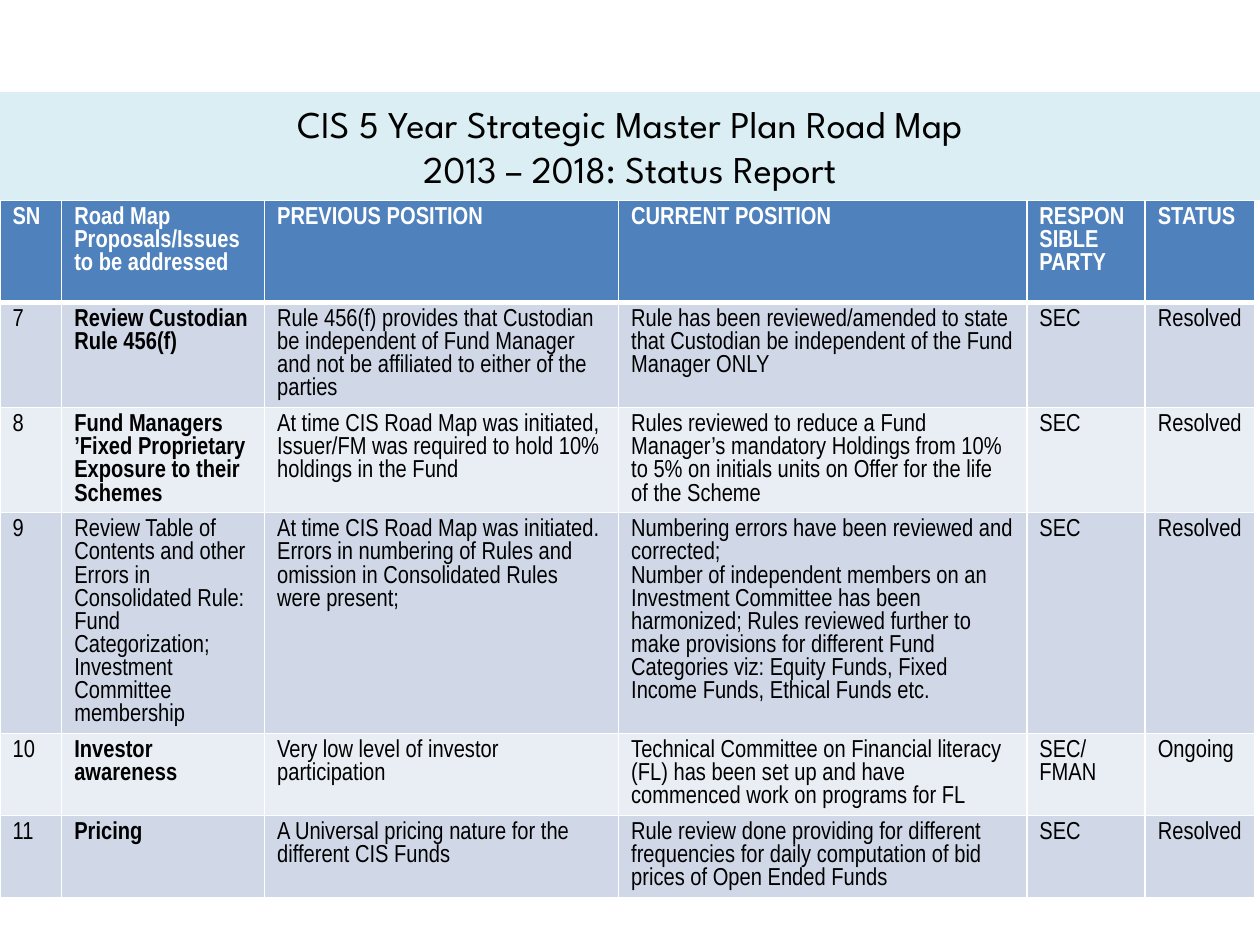
from dataclasses import dataclass

import pptx
import pptx.dml.color
import pptx.enum.shapes
import pptx.enum.text
import pptx.oxml
import pptx.oxml.ns
import pptx.util

COLORS = {
    "banner": "DBEEF4",
    "header": "4F81BD",
    "odd": "D0D8E8",
    "even": "E9EDF4",
    "white": "FFFFFF",
    "black": "000000",
}
SLIDE_WIDTH = pptx.util.Inches(10)
SLIDE_HEIGHT = pptx.util.Inches(7.5)
BANNER_TOP = 0.73
BANNER_HEIGHT = 0.86
TABLE_TOP = BANNER_TOP + BANNER_HEIGHT
COLUMN_WIDTHS = (0.49, 1.61, 2.81, 3.24, 0.94, 0.87)
HEADER_HEIGHT = 0.81
ROW_HEIGHT = 0.41
TITLE = "CIS 5 Year Strategic Master Plan Road Map\v2013 – 2018: Status Report"
HEADINGS = (
    "SN",
    "Road Map Proposals/Issues to be addressed",
    "PREVIOUS POSITION",
    "CURRENT POSITION",
    "RESPONSIBLE PARTY",
    "STATUS",
)


@dataclass(frozen=True)
class Issue:
    number: str
    proposal: str
    previous: str
    current: str
    party: str = "SEC"
    status: str = "Resolved"
    bold: bool = True

    def texts(self) -> tuple[str, ...]:
        return (self.number, self.proposal, self.previous,
                self.current, self.party, self.status)


@dataclass(frozen=True)
class CellStyle:
    fill: str
    color: str
    bold: bool
    bottom_border: float = 1


ISSUES = (
    Issue(
        "7",
        "Review Custodian Rule 456(f)",
        "Rule 456(f) provides that Custodian be independent of Fund Manager "
        "and not be affiliated to either of the parties",
        "Rule has been reviewed/amended to state that Custodian be "
        "independent of the Fund Manager ONLY",
    ),
    Issue(
        "8",
        "Fund Managers ’Fixed Proprietary Exposure to their Schemes",
        "At time CIS Road Map was initiated, Issuer/FM was required to hold "
        "10% holdings in the Fund",
        "Rules reviewed to reduce a Fund Manager’s mandatory Holdings from "
        "10% to 5% on initials units on Offer for the life of the Scheme",
    ),
    Issue(
        "9",
        "Review Table of Contents and other Errors in Consolidated Rule: "
        "Fund Categorization; Investment Committee membership",
        "At time CIS Road Map was initiated. Errors in numbering of Rules "
        "and omission in Consolidated Rules were present;",
        "Numbering errors have been reviewed and corrected;\n"
        "Number of independent members on an Investment Committee has been "
        "harmonized; Rules reviewed further to make provisions for different "
        "Fund Categories viz: Equity Funds, Fixed Income Funds, Ethical "
        "Funds etc.",
        bold=False,
    ),
    Issue(
        "10",
        "Investor awareness",
        "Very low level of investor participation",
        "Technical Committee on Financial literacy (FL) has been set up and "
        "have commenced work on programs for FL",
        party="SEC/\nFMAN",
        status="Ongoing",
    ),
    Issue(
        "11",
        "Pricing",
        "A Universal pricing nature for the different CIS Funds",
        "Rule review done providing for different frequencies for daily "
        "computation of bid prices of Open Ended Funds",
    ),
)


def rgb(name: str) -> pptx.dml.color.RGBColor:
    return pptx.dml.color.RGBColor.from_string(COLORS[name])


def set_font(font: pptx.text.text.Font, name: str, size: float,
             color: str, bold: bool = False) -> None:
    font.name = name
    font.size = pptx.util.Pt(size)
    font.bold = bold
    font.color.rgb = rgb(color)


def set_borders(cell: pptx.table._Cell, bottom: float, top: float) -> None:
    properties = cell._tc.get_or_add_tcPr()
    widths = {"lnL": 1, "lnR": 1, "lnT": top, "lnB": bottom}
    for position, (side, width) in enumerate(widths.items()):
        line = pptx.oxml.parse_xml(
            f'<a:{side} {pptx.oxml.ns.nsdecls("a")} w="{pptx.util.Pt(width)}">'
            f'<a:solidFill><a:srgbClr val="{COLORS["white"]}"/></a:solidFill>'
            f'</a:{side}>'
        )
        properties.insert(position, line)


def fill_cell(cell: pptx.table._Cell, text: str, style: CellStyle,
              top_border: float = 1) -> None:
    cell.text = text
    cell.fill.solid()
    cell.fill.fore_color.rgb = rgb(style.fill)
    for para in cell.text_frame.paragraphs:
        set_font(para.font, "Arial Narrow", 14, style.color, style.bold)
    set_borders(cell, style.bottom_border, top_border)


def add_road_map(page: pptx.slide.Slide) -> None:
    height = HEADER_HEIGHT + ROW_HEIGHT * len(ISSUES)
    table = page.shapes.add_table(
        len(ISSUES) + 1, len(COLUMN_WIDTHS),
        0, pptx.util.Inches(TABLE_TOP),
        pptx.util.Inches(sum(COLUMN_WIDTHS)), pptx.util.Inches(height),
    ).table
    for column, width in zip(table.columns, COLUMN_WIDTHS):
        column.width = pptx.util.Inches(width)
    for index, row in enumerate(table.rows):
        row.height = pptx.util.Inches(ROW_HEIGHT if index else HEADER_HEIGHT)

    header = CellStyle("header", "white", True, bottom_border=3)
    for column, heading in enumerate(HEADINGS):
        fill_cell(table.cell(0, column), heading, header)
    for row, issue in enumerate(ISSUES, start=1):
        band = "odd" if row % 2 else "even"
        top_border = header.bottom_border if row == 1 else 1
        for column, text in enumerate(issue.texts()):
            style = CellStyle(band, "black", issue.bold and column == 1)
            fill_cell(table.cell(row, column), text, style, top_border)


def add_banner(page: pptx.slide.Slide) -> None:
    box = page.shapes.add_shape(
        pptx.enum.shapes.MSO_SHAPE.RECTANGLE,
        0, pptx.util.Inches(BANNER_TOP),
        SLIDE_WIDTH, pptx.util.Inches(BANNER_HEIGHT),
    )
    box.shadow.inherit = False
    box.fill.solid()
    box.fill.fore_color.rgb = rgb("banner")
    box.line.fill.background()
    box.text_frame.word_wrap = True
    box.text_frame.vertical_anchor = pptx.enum.text.MSO_ANCHOR.MIDDLE
    para = box.text_frame.paragraphs[0]
    para.text = TITLE
    para.alignment = pptx.enum.text.PP_ALIGN.CENTER
    set_font(para.font, "League Spartan", 21.6, "black")


def main() -> None:
    deck = pptx.Presentation()
    deck.slide_width = SLIDE_WIDTH
    deck.slide_height = SLIDE_HEIGHT
    page = deck.slides.add_slide(deck.slide_layouts[6])
    add_road_map(page)
    add_banner(page)
    deck.save("out.pptx")


if __name__ == "__main__":
    main()
